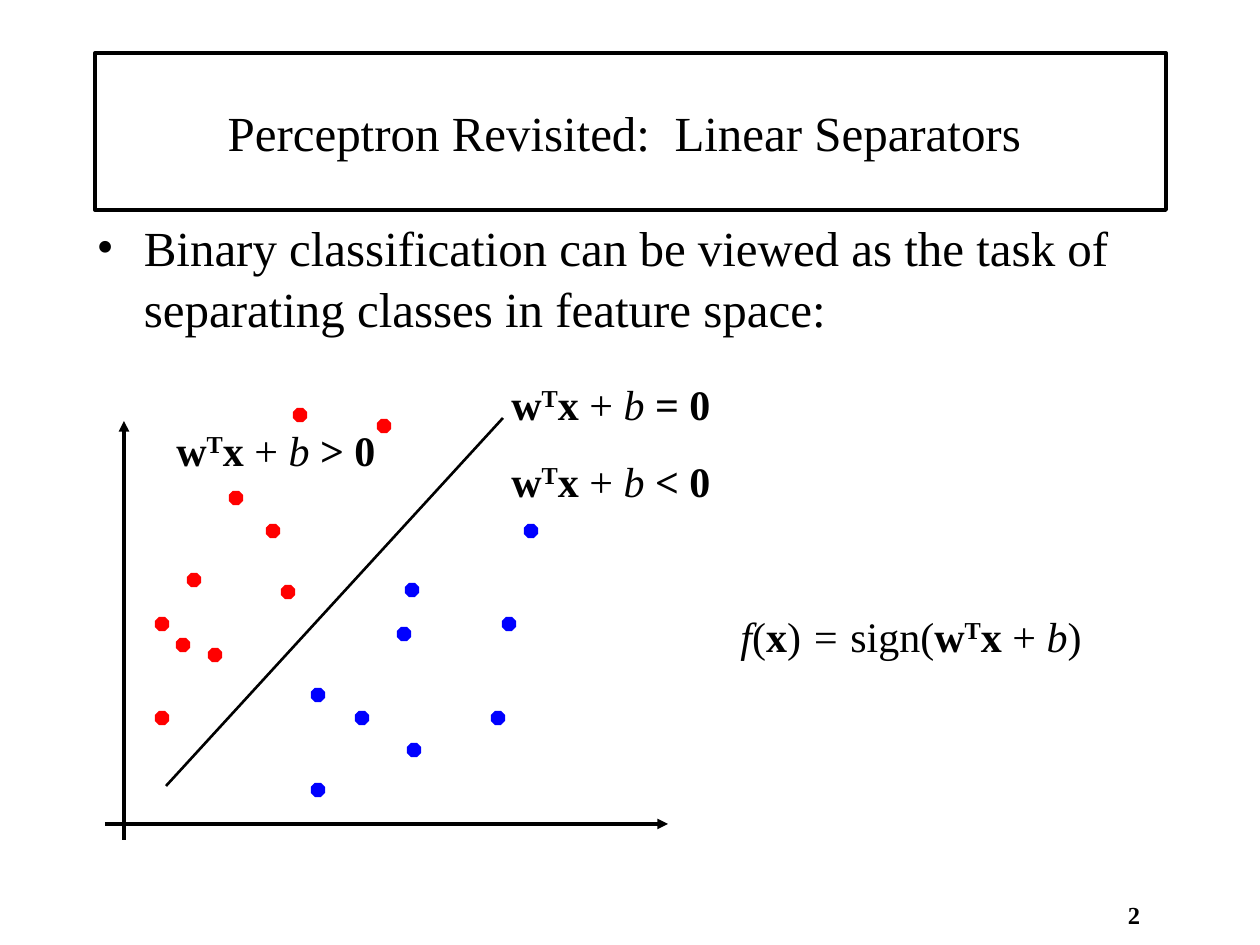
from typing import NamedTuple

from lxml import etree
from pptx import Presentation
from pptx.dml.color import RGBColor
from pptx.enum.shapes import MSO_CONNECTOR, MSO_SHAPE
from pptx.enum.text import MSO_ANCHOR, MSO_AUTO_SIZE, PP_ALIGN
from pptx.oxml.ns import qn
from pptx.util import Emu, Pt

STRAIGHT = MSO_CONNECTOR.STRAIGHT
OCTAGON = MSO_SHAPE.OCTAGON
MIDDLE, TOP = MSO_ANCHOR.MIDDLE, MSO_ANCHOR.TOP
LEFT, CENTER = PP_ALIGN.LEFT, PP_ALIGN.CENTER
NO_AUTOFIT = MSO_AUTO_SIZE.NONE

EMU_PER_PX = 914400 / 126
FONT = "Times New Roman"
COLORS = {"ink": "000000", "paper": "FFFFFF", "positive": "FF0000", "negative": "0000FF"}
DOT_SIZE = 13


class Box(NamedTuple):
    left: int
    top: int
    width: int
    height: int


class Span(NamedTuple):
    text: str
    style: str = ""


class Formula(NamedTuple):
    box: Box
    spans: list[Span]


class Line(NamedTuple):
    start: tuple[int, int]
    end: tuple[int, int]
    weight: float
    arrow: bool


class DotClass(NamedTuple):
    color: str
    centers: list[tuple[int, int]]


PRODUCT = [Span("w", "b"), Span("T", "b^"), Span("x ", "b"), Span("+ "), Span("b", "i")]

FORMULAS = [
    Formula(Box(499, 372, 368, 63), PRODUCT + [Span(" = 0", "b")]),
    Formula(Box(499, 449, 368, 63), PRODUCT + [Span(" < 0", "b")]),
    Formula(Box(164, 418, 368, 63), PRODUCT + [Span(" > 0", "b")]),
    Formula(
        Box(728, 604, 404, 63),
        [Span("f", "i"), Span("("), Span("x", "b"), Span(")"), Span(" = ", "i"), Span("sign(")]
        + PRODUCT
        + [Span(")")],
    ),
]

LINES = [
    Line((124, 840), (124, 421), 2, True),
    Line((105, 824), (668, 824), 2, True),
    Line((166, 786), (503, 418), 1.5, False),
]

DOT_CLASSES = [
    DotClass("positive", [(300, 415), (384, 426), (236, 498), (273, 531), (194, 580),
                          (288, 592), (162, 624), (183, 645), (215, 655), (162, 718)]),
    DotClass("negative", [(531, 531), (412, 590), (404, 634), (509, 624), (318, 695),
                          (362, 718), (498, 718), (414, 750), (318, 790)]),
]


def px(length: float) -> Emu:
    return Emu(round(length * EMU_PER_PX))


def rgb(name: str) -> RGBColor:
    return RGBColor.from_string(COLORS[name])


def place(shape, box: Box) -> None:
    shape.left, shape.top, shape.width, shape.height = map(px, box)


def write(shape, spans: list[Span], *, size: int, align=LEFT, anchor=TOP):
    frame = shape.text_frame
    frame.word_wrap = True
    frame.auto_size = NO_AUTOFIT
    frame.vertical_anchor = anchor
    paragraph = frame.paragraphs[0]
    paragraph.alignment = align
    paragraph.space_before = Pt(0)
    for span in spans:
        run = paragraph.add_run()
        run.text = span.text
        font = run.font
        font.name, font.size = FONT, Pt(size)
        font.bold, font.italic = "b" in span.style, "i" in span.style
        font.color.rgb = rgb("ink")
        if "^" in span.style:
            run._r.get_or_add_rPr().set("baseline", "30000")
    return paragraph


def draw_title(slide) -> None:
    title = slide.shapes.title
    place(title, Box(95, 53, 1071, 157))
    title.line.color.rgb = rgb("ink")
    title.line.width = Pt(2.25)
    write(title, [Span("Perceptron Revisited:  Linear Separators ")],
          size=28, align=CENTER, anchor=MIDDLE)


def draw_body(slide) -> None:
    body = slide.placeholders[1]
    place(body, Box(84, 208, 1134, 693))
    claim = "Binary classification can be viewed as the task of separating classes in feature space:"
    paragraph = write(body, [Span(claim)], size=28)
    paragraph.line_spacing = 1.05
    properties = paragraph._p.get_or_add_pPr()
    etree.SubElement(properties, qn("a:buFont"), typeface=FONT)
    etree.SubElement(properties, qn("a:buChar"), char="•")


def draw_line(slide, line: Line) -> None:
    connector = slide.shapes.add_connector(STRAIGHT, *map(px, line.start + line.end))
    connector.line.color.rgb = rgb("ink")
    connector.line.width = Pt(line.weight)
    if line.arrow:
        etree.SubElement(connector.line._get_or_add_ln(), qn("a:tailEnd"), type="triangle")
    etree.SubElement(connector._element.spPr, qn("a:effectLst"))


def draw_dot(slide, center: tuple[int, int], color: str) -> None:
    x, y = center
    corner = (x - DOT_SIZE / 2, y - DOT_SIZE / 2)
    dot = slide.shapes.add_shape(OCTAGON, *map(px, corner + (DOT_SIZE, DOT_SIZE)))
    dot.shadow.inherit = False
    dot.fill.solid()
    dot.fill.fore_color.rgb = rgb(color)
    dot.line.color.rgb = rgb(color)
    dot.line.width = Pt(0.75)


def draw_formula(slide, formula: Formula) -> None:
    label = slide.shapes.add_textbox(*map(px, formula.box))
    write(label, formula.spans, size=24)


def draw_page_number(slide) -> None:
    number = slide.shapes.add_textbox(*map(px, Box(1113, 900, 42, 45)))
    number.fill.solid()
    number.fill.fore_color.rgb = rgb("paper")
    frame = number.text_frame
    frame.margin_left = frame.margin_right = frame.margin_top = frame.margin_bottom = 0
    write(number, [Span("2", "b")], size=14, align=CENTER)


def main() -> None:
    deck = Presentation()
    deck.slide_width, deck.slide_height = px(1260), px(945)
    slide = deck.slides.add_slide(deck.slide_layouts[1])
    draw_title(slide)
    draw_body(slide)
    for line in LINES:
        draw_line(slide, line)
    for dots in DOT_CLASSES:
        for center in dots.centers:
            draw_dot(slide, center, dots.color)
    for formula in FORMULAS:
        draw_formula(slide, formula)
    draw_page_number(slide)
    deck.save("out.pptx")


if __name__ == "__main__":
    main()
